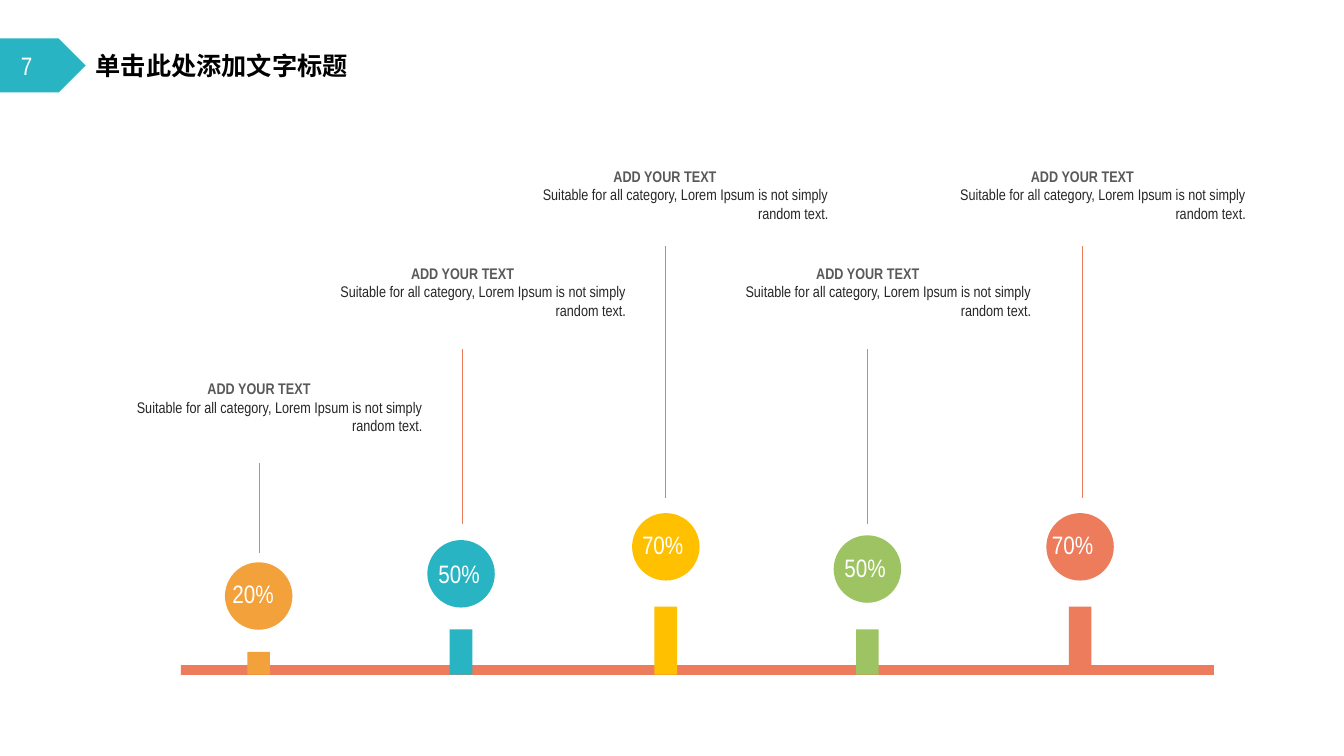
import pptx
import pptx.util
from pptx.dml.color import RGBColor
from pptx.enum.shapes import MSO_CONNECTOR, MSO_SHAPE
from pptx.enum.text import MSO_ANCHOR, PP_ALIGN
from pptx.oxml.ns import qn
from lxml import etree

Cm = pptx.util.Cm
Pt = pptx.util.Pt

FONT = "Arial Narrow"
CORAL, TEAL, WHITE = "ED7C5C", "28B4C3", "FFFFFF"
TITLE = "单击此处添加文字标题"
NUMBER = "7"
HEADING = "ADD YOUR TEXT"
DETAIL = "Suitable for all category, Lorem Ipsum is not simply random text."

# Lengths in centimetres. Each tier sets the bar height in units and the stem.
TIERS = {
    1: {"caption": 9.3, "stem": (11.66, 13.94)},
    2: {"caption": 6.38, "stem": (8.79, 13.21)},
    3: {"caption": 3.94, "stem": (6.2, 12.55)},
}
COLUMNS = [
    {"share": "20%", "color": "F3A13A", "tier": 1, "center": 6.52, "stem": 6.53,
     "circle": 14.17, "label": (5.61, 14.45)},
    {"share": "50%", "color": TEAL, "tier": 2, "center": 11.62, "stem": 11.66,
     "circle": 13.61, "label": (10.8, 13.94)},
    {"share": "70%", "color": "FFC000", "tier": 3, "center": 16.78, "stem": 16.76,
     "circle": 12.93, "label": (15.93, 13.21)},
    {"share": "50%", "color": "9DC362", "tier": 2, "center": 21.86, "stem": 21.87,
     "circle": 13.49, "label": (21.03, 13.79)},
    {"share": "70%", "color": CORAL, "tier": 3, "center": 27.22, "stem": 27.28,
     "circle": 12.93, "label": (26.26, 13.21)},
]
BAR = 0.57
BASE = 17.0
CIRCLE = 1.7
CAPTION_WIDTH = 8.74
LABEL_SIZE = (1.9, 1.02)


def rgb(value):
    return RGBColor.from_string(value)


def add_block(page, kind, left, top, width, height, color):
    block = page.shapes.add_shape(kind, Cm(left), Cm(top), Cm(width), Cm(height))
    block.shadow.inherit = False
    block.fill.solid()
    block.fill.fore_color.rgb = rgb(color)
    block.line.fill.background()


def write(para, text, size, color, bold=False, **layout):
    """Fill one paragraph; layout holds paragraph attributes."""
    for name, value in layout.items():
        setattr(para, name, value)
    span = para.add_run()
    span.text = text
    for name, value in {"name": FONT, "size": Pt(size), "bold": bold}.items():
        setattr(span.font, name, value)
    span.font.color.rgb = rgb(color)


def add_box(page, left, top, width, height):
    box = page.shapes.add_textbox(Cm(left), Cm(top), Cm(width), Cm(height))
    box.text_frame.word_wrap = True
    return box.text_frame


def add_stem(page, x, top, bottom):
    stem = page.shapes.add_connector(
        MSO_CONNECTOR.STRAIGHT, Cm(x), Cm(bottom), Cm(x), Cm(top))
    stem.line.color.rgb = rgb(CORAL)
    stem.line.width = Pt(0.5)
    etree.SubElement(stem._element.spPr, qn("a:effectLst"))


def add_header(page):
    add_block(page, MSO_SHAPE.PENTAGON, 0, 0.97, 2.16, 1.36, TEAL)
    number = add_box(page, 0.28, 1.14, 1.27, 1.02)
    write(number.paragraphs[0], NUMBER, 18, WHITE)
    title = page.shapes.title
    place = {"left": 2.16, "top": 1.14, "width": 7.47, "height": 1.02}
    for name, value in place.items():
        setattr(title, name, Cm(value))
    title.text_frame.vertical_anchor = MSO_ANCHOR.TOP
    title.text_frame.word_wrap = True
    write(title.text_frame.paragraphs[0], TITLE, 18, "000000", bold=True,
          alignment=PP_ALIGN.LEFT)


def add_column(page, column):
    tier = TIERS[column["tier"]]
    center, color = column["center"], column["color"]
    height = BAR * column["tier"]
    add_block(page, MSO_SHAPE.RECTANGLE, center - BAR / 2, BASE - height,
              BAR, height, color)
    add_block(page, MSO_SHAPE.OVAL, center - CIRCLE / 2, column["circle"],
              CIRCLE, CIRCLE, color)
    label = add_box(page, *column["label"], *LABEL_SIZE)
    write(label.paragraphs[0], column["share"], 18, WHITE)
    add_stem(page, column["stem"], *tier["stem"])
    caption = add_box(page, column["stem"] - CAPTION_WIDTH / 2, tier["caption"],
                      CAPTION_WIDTH, 1.35)
    write(caption.paragraphs[0], HEADING, 11, "595959", bold=True,
          alignment=PP_ALIGN.CENTER, line_spacing=1.3)
    write(caption.add_paragraph(), DETAIL, 11, "262626",
          alignment=PP_ALIGN.RIGHT)


def main():
    deck = pptx.Presentation()
    deck.slide_width, deck.slide_height = Cm(33.87), Cm(19.05)
    page = deck.slides.add_slide(deck.slide_layouts.get_by_name("Title Only"))
    add_header(page)
    add_block(page, MSO_SHAPE.RECTANGLE, 4.56, 16.76, 26.03, 0.25, CORAL)
    for column in COLUMNS:
        add_column(page, column)
    deck.save("out.pptx")


if __name__ == "__main__":
    main()
